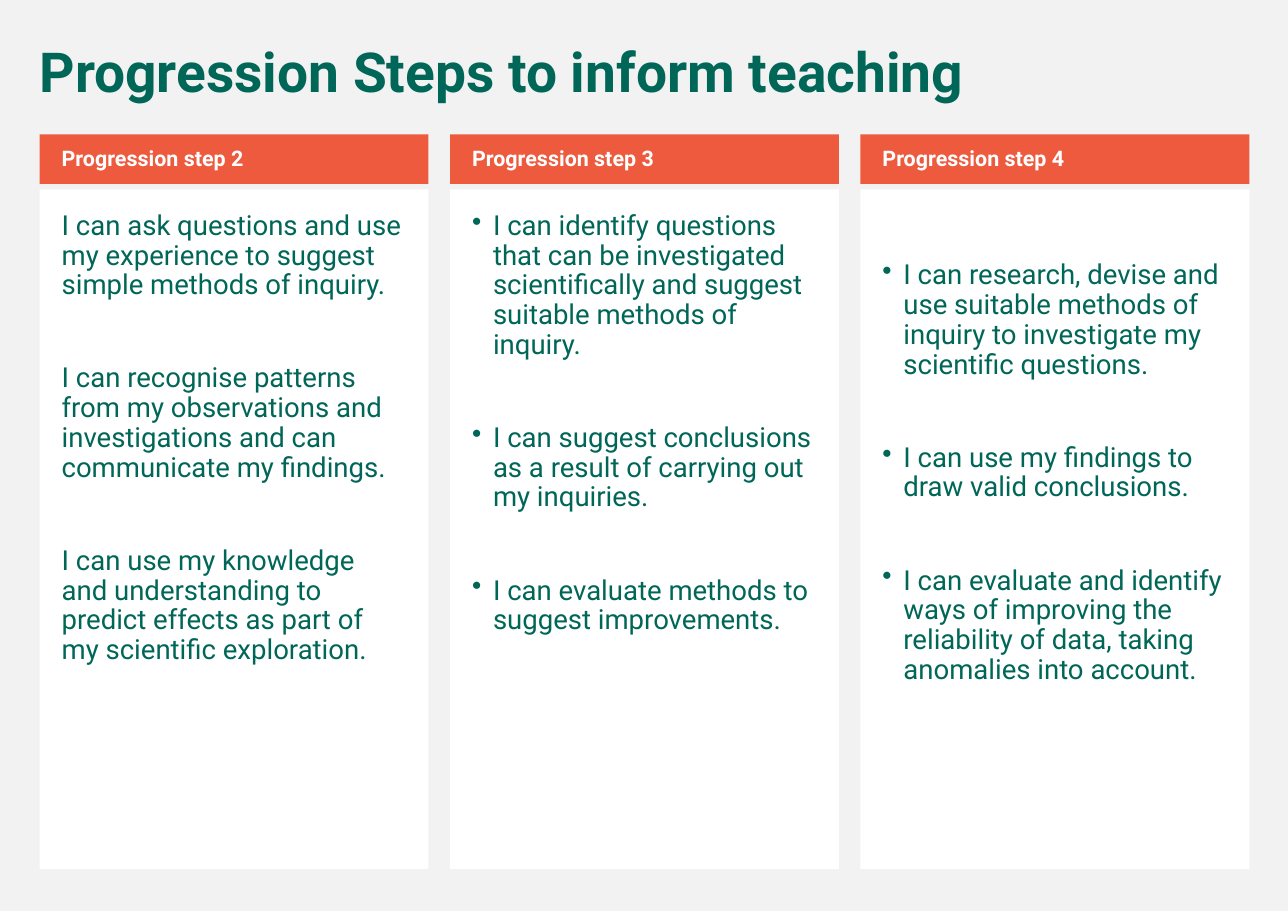
from dataclasses import dataclass

from lxml.etree import SubElement
from pptx import Presentation
from pptx.dml.color import RGBColor
from pptx.enum.shapes import MSO_SHAPE
from pptx.enum.text import MSO_ANCHOR, PP_ALIGN
from pptx.oxml.ns import qn
from pptx.util import Inches, Pt


@dataclass(frozen=True)
class Theme:
    font: str = "Roboto"
    page: RGBColor = RGBColor.from_string("F2F2F2")
    panel: RGBColor = RGBColor.from_string("FFFFFF")
    banner: RGBColor = RGBColor.from_string("ED5A3E")
    ink: RGBColor = RGBColor.from_string("006758")
    title_size: int = 36
    banner_size: int = 14
    body_size: int = 18
    paragraph_gap: float = 11
    statement_gap: float = 41.4


@dataclass(frozen=True)
class Grid:
    width: float = 11.69
    height: float = 8.27
    left: float = 0.36
    right: float = 0.35
    column: float = 3.53
    banner_top: float = 1.22
    banner_height: float = 0.45
    panel_top: float = 1.72
    panel_height: float = 6.17
    padding: float = 0.2
    hanging: float = 0.19

    def column_left(self, index, count):
        return self.left + index * (self.width - self.left - self.right - self.column) / (count - 1)


THEME = Theme()
GRID = Grid()

TITLE = "Progression Steps to inform teaching"
STEPS = [
    {
        "heading": "Progression step 2",
        "bulleted": False,
        "top_inset": GRID.padding,
        "statements": [
            "I can ask questions and use my experience to suggest simple methods of inquiry.",
            "I can recognise patterns from my observations and investigations and can communicate my findings.",
            "I can use my knowledge and understanding to predict effects as part of my scientific exploration.",
        ],
    },
    {
        "heading": "Progression step 3",
        "bulleted": True,
        "top_inset": GRID.padding,
        "statements": [
            "I can identify questions that can be investigated scientifically and suggest suitable methods of inquiry.",
            "I can suggest conclusions as a result of carrying out my inquiries.",
            "I can evaluate methods to suggest improvements.",
        ],
    },
    {
        "heading": "Progression step 4",
        "bulleted": True,
        "top_inset": GRID.padding + 0.45,
        "statements": [
            "I can research, devise and use suitable methods of inquiry to investigate my scientific questions.",
            "I can use my findings to draw valid conclusions.",
            "I can evaluate and identify ways of improving the reliability of data, taking anomalies into account.",
        ],
    },
]


def apply_format(target, values):
    for name, value in values.items():
        setattr(target, name, value)


def set_frame(box, insets, anchor=MSO_ANCHOR.TOP):
    left, top, right, bottom = map(Inches, insets)
    apply_format(box.text_frame, {
        "word_wrap": True,
        "vertical_anchor": anchor,
        "margin_left": left,
        "margin_top": top,
        "margin_right": right,
        "margin_bottom": bottom,
    })


def add_bullet(para):
    properties = para._p.get_or_add_pPr()
    properties.set("marL", str(Inches(GRID.hanging)))
    properties.set("indent", str(-Inches(GRID.hanging)))
    SubElement(properties, qn("a:buChar")).set("char", "•")


def write_text(box, texts, size, color, bold=False, gap=THEME.paragraph_gap, bulleted=False):
    frame = box.text_frame
    for index, text in enumerate(texts):
        para = frame.add_paragraph() if index else frame.paragraphs[0]
        apply_format(para, {
            "alignment": PP_ALIGN.LEFT,
            "line_spacing": 0.9,
            "space_before": Pt(gap if index else THEME.paragraph_gap),
        })
        if bulleted:
            add_bullet(para)
        span = para.add_run()
        span.text = text
        apply_format(span.font, {"name": THEME.font, "size": Pt(size), "bold": bold})
        span.font.color.rgb = color


def add_block(page, left, top, height, fill):
    box = page.shapes.add_shape(
        MSO_SHAPE.RECTANGLE, Inches(left), Inches(top), Inches(GRID.column), Inches(height))
    box.shadow.inherit = False
    box.fill.solid()
    box.fill.fore_color.rgb = fill
    box.line.fill.background()
    return box


def add_title(page, text):
    box = page.shapes.add_textbox(Inches(GRID.left - 0.1), Inches(0.36), Inches(11.08), Inches(0.65))
    set_frame(box, (0.1, 0.05, 0.1, 0.05))
    write_text(box, [text], THEME.title_size, THEME.ink, bold=True)


def add_step(page, left, step):
    panel = add_block(page, left, GRID.panel_top, GRID.panel_height, THEME.panel)
    set_frame(panel, (GRID.padding, step["top_inset"], GRID.padding, GRID.padding))
    write_text(panel, step["statements"], THEME.body_size, THEME.ink,
               gap=THEME.statement_gap, bulleted=step["bulleted"])
    banner = add_block(page, left, GRID.banner_top, GRID.banner_height, THEME.banner)
    set_frame(banner, (GRID.padding, 0.05, 0.1, 0.05), MSO_ANCHOR.MIDDLE)
    write_text(banner, [step["heading"]], THEME.banner_size, THEME.panel, bold=True)


def main():
    deck = Presentation()
    apply_format(deck, {"slide_width": Inches(GRID.width), "slide_height": Inches(GRID.height)})
    page = deck.slides.add_slide(deck.slide_layouts[6])
    page.background.fill.solid()
    page.background.fill.fore_color.rgb = THEME.page
    for index, step in enumerate(STEPS):
        add_step(page, GRID.column_left(index, len(STEPS)), step)
    add_title(page, TITLE)
    deck.save("out.pptx")


if __name__ == "__main__":
    main()
